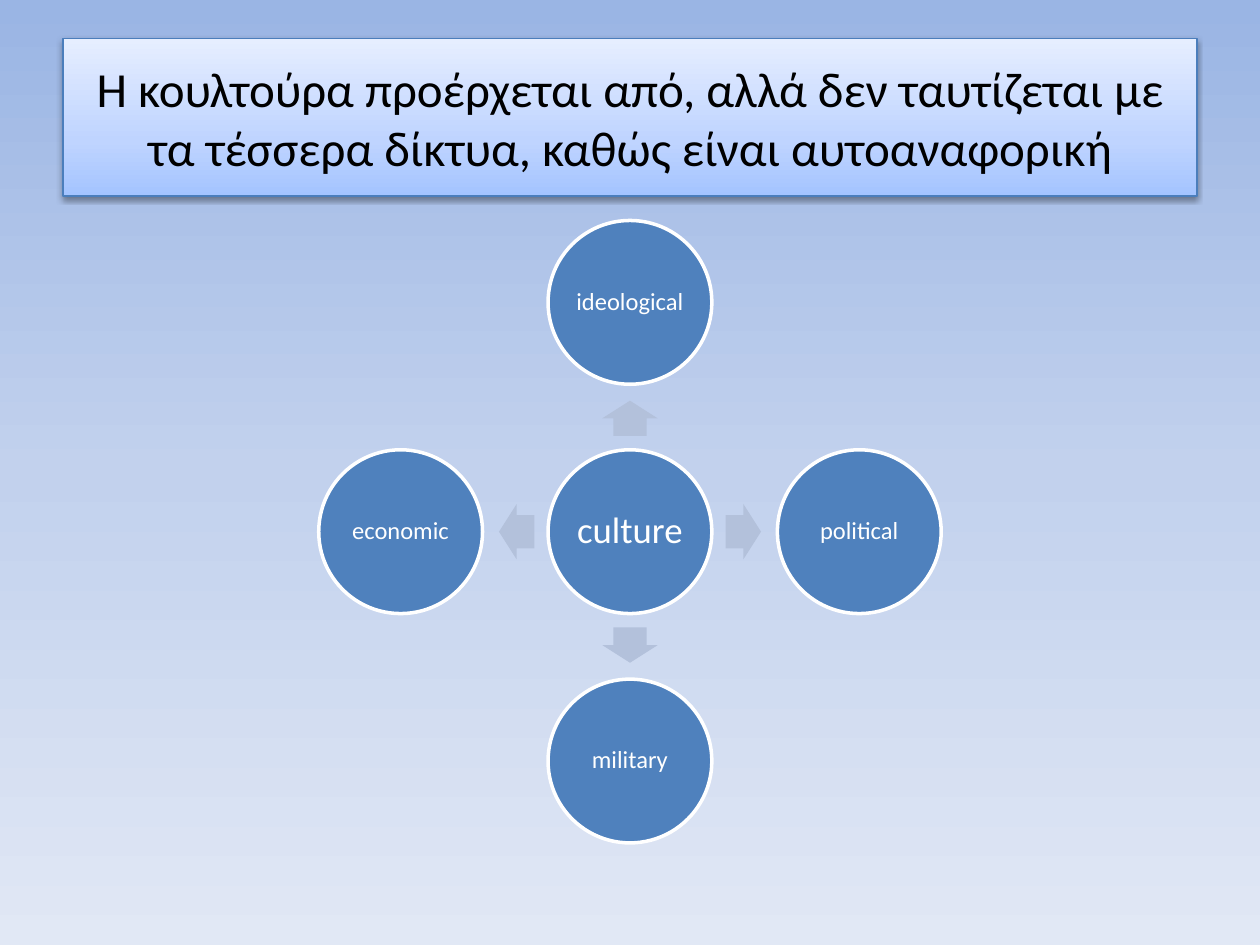
from copy import deepcopy

from lxml.etree import SubElement
from pptx import Presentation
from pptx.dml.color import RGBColor
from pptx.enum.shapes import MSO_SHAPE
from pptx.enum.text import MSO_ANCHOR, PP_ALIGN
from pptx.oxml.ns import qn
from pptx.util import Inches, Pt

COLORS = {
    "sky": ["9AB5E4", "C2D1ED", "E1E8F5"],
    "banner": ["A4C4FF", "BFD4FF", "E6EEFF"],
    "edge": "4B7EBC",
    "disc": "4F81BD",
    "arrow": "B3C1DB",
    "white": "FFFFFF",
    "black": "000000",
}


class Deck:
    font = "Calibri"

    def __init__(self, prs):
        self.slide = prs.slides.add_slide(prs.slide_layouts[6])

    def rgb(self, name):
        return RGBColor.from_string(COLORS[name])

    def blend(self, fill, owner, name, middle, angle):
        """Three-stop linear gradient."""
        fill.gradient()
        fill.gradient_angle = angle
        first = owner.xpath(".//a:gradFill/a:gsLst/a:gs")[0]
        first.addnext(deepcopy(first))
        for stop, color, place in zip(fill.gradient_stops, COLORS[name], (0, middle, 1)):
            stop.color.rgb = RGBColor.from_string(color)
            stop.position = place

    def backdrop(self):
        self.blend(self.slide.background.fill, self.slide.element, "sky", 0.5, 270)

    def shape(self, kind, x, y, w, h):
        """Shape centred on x, y."""
        item = self.slide.shapes.add_shape(
            kind, Inches(x - w / 2), Inches(y - h / 2), Inches(w), Inches(h))
        item.shadow.inherit = False
        return item

    def outline(self, item, color, width):
        item.line.color.rgb = self.rgb(color)
        item.line.width = Pt(width)

    def label(self, item, text, size, color):
        frame = item.text_frame
        frame.word_wrap = True
        frame.vertical_anchor = MSO_ANCHOR.MIDDLE
        para = frame.paragraphs[0]
        para.text = text
        para.alignment = PP_ALIGN.CENTER
        para.font.name = self.font
        para.font.size = Pt(size)
        para.font.color.rgb = self.rgb(color)
        return frame

    def shade(self, item):
        effects = item.element.spPr.find(qn("a:effectLst"))
        outer = SubElement(effects, qn("a:outerShdw"), blurRad=str(Pt(3.1)),
                           dist=str(Pt(1.6)), dir="5400000", rotWithShape="0")
        tint = SubElement(outer, qn("a:srgbClr"), val=COLORS["black"])
        SubElement(tint, qn("a:alpha"), val="38000")

    def banner(self, text, x, y, w, h):
        item = self.shape(MSO_SHAPE.RECTANGLE, x, y, w, h)
        self.blend(item.fill, item.element, "banner", 0.35, 90)
        self.outline(item, "edge", 0.75)
        self.shade(item)
        self.label(item, text, 28, "black")

    def disc(self, text, x, y, size, inset):
        item = self.shape(MSO_SHAPE.OVAL, x, y, 1.3, 1.3)
        item.fill.solid()
        item.fill.fore_color.rgb = self.rgb("disc")
        self.outline(item, "white", 2)
        frame = self.label(item, text, size, "white")
        frame.paragraphs[0].line_spacing = 0.9
        frame.margin_left = frame.margin_right = Inches(inset)
        frame.margin_top = frame.margin_bottom = Inches(inset)

    def arrow(self, x, y, turn):
        item = self.shape(MSO_SHAPE.RIGHT_ARROW, x, y, 0.28, 0.44)
        item.adjustments[0] = 0.6
        item.adjustments[1] = 0.5
        item.rotation = turn
        item.fill.solid()
        item.fill.fore_color.rgb = self.rgb("arrow")
        item.line.fill.background()


def main():
    prs = Presentation()
    prs.slide_width, prs.slide_height = Inches(10), Inches(7.5)
    deck = Deck(prs)
    deck.backdrop()

    # Title
    deck.banner("Η κουλτούρα προέρχεται από, αλλά δεν ταυτίζεται με "
                "τα τέσσερα δίκτυα, καθώς είναι αυτοαναφορική", 5, 0.93, 9, 1.25)

    # Hub
    mid_x, mid_y = 5, 4.22
    deck.disc("culture", mid_x, mid_y, 21, 0.03)

    # Networks around the hub: name, direction, arrow turn
    reach, gap = 1.82, 0.9
    for name, dx, dy, turn in (
        ("ideological", 0, -1, 270),
        ("political", 1, 0, 0),
        ("military", 0, 1, 90),
        ("economic", -1, 0, 180),
    ):
        deck.arrow(mid_x + dx * gap, mid_y + dy * gap, turn)
        deck.disc(name, mid_x + dx * reach, mid_y + dy * reach, 14, 0.02)

    prs.save("out.pptx")


if __name__ == "__main__":
    main()
